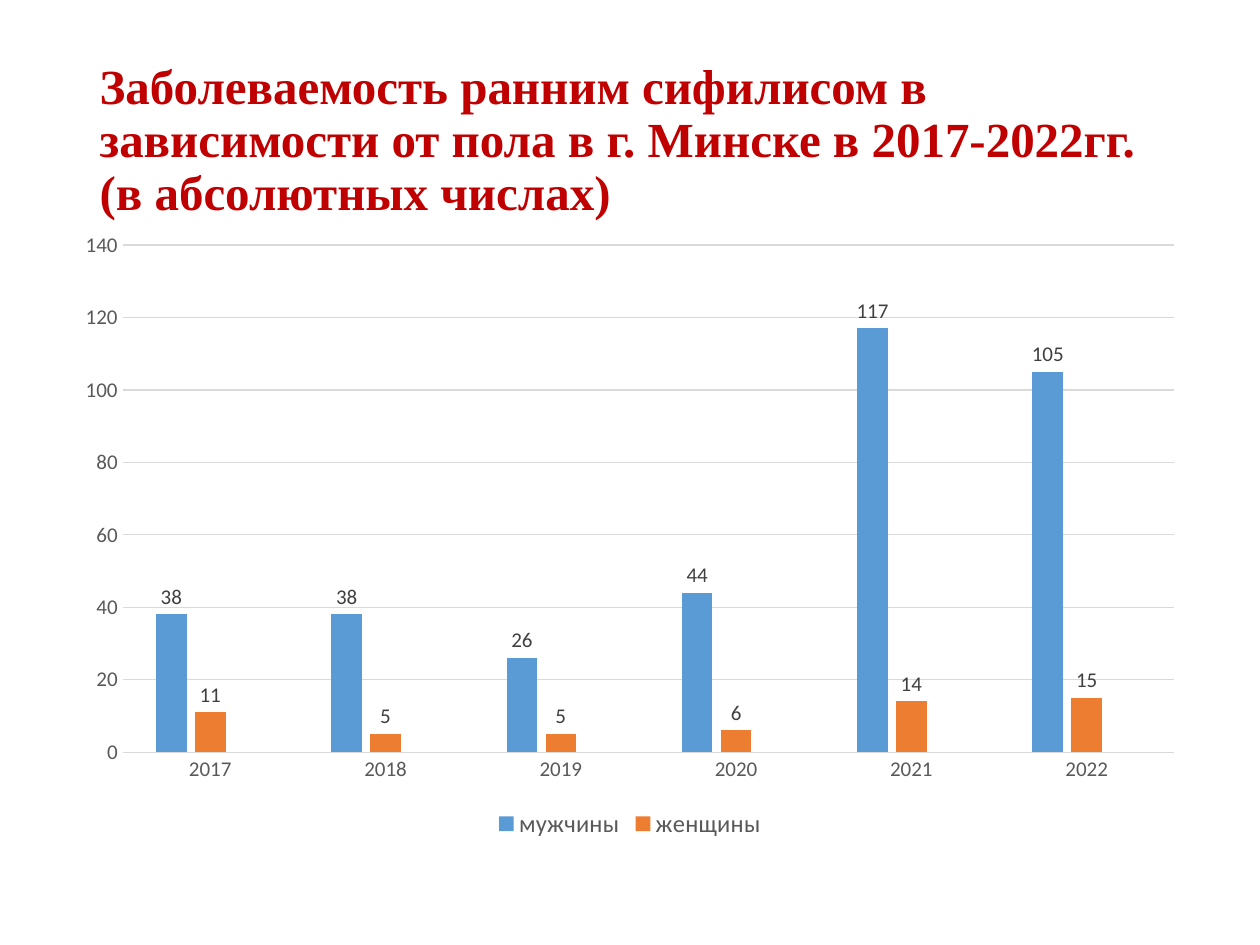
from lxml import etree
from pptx import Presentation
from pptx.chart.data import CategoryChartData
from pptx.dml.color import RGBColor
from pptx.enum.chart import XL_CHART_TYPE, XL_LABEL_POSITION, XL_LEGEND_POSITION, XL_TICK_MARK
from pptx.enum.text import MSO_ANCHOR, MSO_AUTO_SIZE, PP_ALIGN
from pptx.oxml.ns import qn
from pptx.util import Pt

COLUMN = XL_CHART_TYPE.COLUMN_CLUSTERED
OUTSIDE = XL_LABEL_POSITION.OUTSIDE_END
BOTTOM = XL_LEGEND_POSITION.BOTTOM
NO_TICK = XL_TICK_MARK.NONE
MIDDLE = MSO_ANCHOR.MIDDLE
NO_FIT = MSO_AUTO_SIZE.NONE
LEFT = PP_ALIGN.LEFT

TITLE = ("Заболеваемость ранним сифилисом в зависимости от пола "
         "в г. Минске в 2017-2022гг. (в абсолютных числах)")
YEARS = ["2017", "2018", "2019", "2020", "2021", "2022"]
SERIES = [
    ("мужчины", [38, 38, 26, 44, 117, 105], "5B9BD5"),
    ("женщины", [11, 5, 5, 6, 14, 15], "ED7D31"),
    ("Series 3", [None] * len(YEARS), "A5A5A5"),
]


def px(n):
    return round(n * 914400 / 126)


def rgb(value):
    return RGBColor.from_string(value)


def set_font(font, size, color, name="Calibri", bold=False):
    font.size = Pt(size)
    font.color.rgb = rgb(color)
    font.name = name
    font.bold = bold


def add_text(tf, text, spacing=1.0, align=LEFT, **font):
    p = tf.paragraphs[0]
    p.alignment = align
    p.line_spacing = spacing
    r = p.add_run()
    r.text = text
    set_font(r.font, **font)


class SlideBuilder:
    grid_color = "D9D9D9"
    axis_color = "595959"
    label_color = "404040"

    def __init__(self, prs):
        self.s = prs.slides.add_slide(prs.slide_layouts[5])

    def title(self, text, x, y, w, h):
        sp = self.s.shapes.title
        sp.left, sp.top, sp.width, sp.height = map(px, (x, y, w, h))
        tf = sp.text_frame
        tf.word_wrap = True
        tf.auto_size = NO_FIT
        tf.vertical_anchor = MIDDLE
        add_text(tf, text, spacing=0.9, size=28, color="C00000",
                 name="Times New Roman", bold=True)

    def line(self, fmt):
        fmt.line.color.rgb = rgb(self.grid_color)
        fmt.line.width = Pt(0.75)

    def column_chart(self, categories, series, x, y, w, h):
        data = CategoryChartData()
        data.categories = categories
        for name, values, _ in series:
            data.add_series(name, values)
        chart = self.s.shapes.add_chart(COLUMN, *map(px, (x, y, w, h)), data).chart
        chart.has_title = False
        set_font(chart.font, 10, "000000")
        plot = chart.plots[0]
        plot.vary_by_categories = False
        plot.gap_width = 219
        plot.overlap = -27
        for ser, (_, values, color) in zip(plot.series, series):
            ser.format.fill.solid()
            ser.format.fill.fore_color.rgb = rgb(color)
            if any(values):
                labels = ser.data_labels
                labels.show_value = True
                labels.position = OUTSIDE
                set_font(labels.font, 12, self.label_color)
        self.axes(chart)
        hidden = [i for i, (_, values, _) in enumerate(series) if not any(values)]
        self.legend(chart, hidden)

    def axes(self, chart):
        for axis in (chart.category_axis, chart.value_axis):
            axis.major_tick_mark = axis.minor_tick_mark = NO_TICK
            set_font(axis.tick_labels.font, 12, self.axis_color)
        self.line(chart.category_axis.format)
        value_axis = chart.value_axis
        value_axis.minimum_scale = 0
        value_axis.maximum_scale = 140
        value_axis.major_unit = 20
        value_axis.format.line.fill.background()
        value_axis.has_major_gridlines = True
        self.line(value_axis.major_gridlines.format)

    def legend(self, chart, hidden):
        chart.has_legend = True
        legend = chart.legend
        legend.position = BOTTOM
        legend.include_in_layout = False
        set_font(legend.font, 14, self.axis_color)
        position = legend._element.find(qn("c:legendPos"))
        for i in reversed(hidden):
            entry = etree.Element(qn("c:legendEntry"))
            etree.SubElement(entry, qn("c:idx")).set("val", str(i))
            etree.SubElement(entry, qn("c:delete")).set("val", "1")
            position.addnext(entry)


def main():
    prs = Presentation()
    prs.slide_width, prs.slide_height = px(1260), px(945)
    slide = SlideBuilder(prs)
    slide.title(TITLE, 87, 50, 1086, 183)
    slide.column_chart(YEARS, SERIES, 63, 220, 1134, 624)
    prs.save("out.pptx")


if __name__ == "__main__":
    main()
